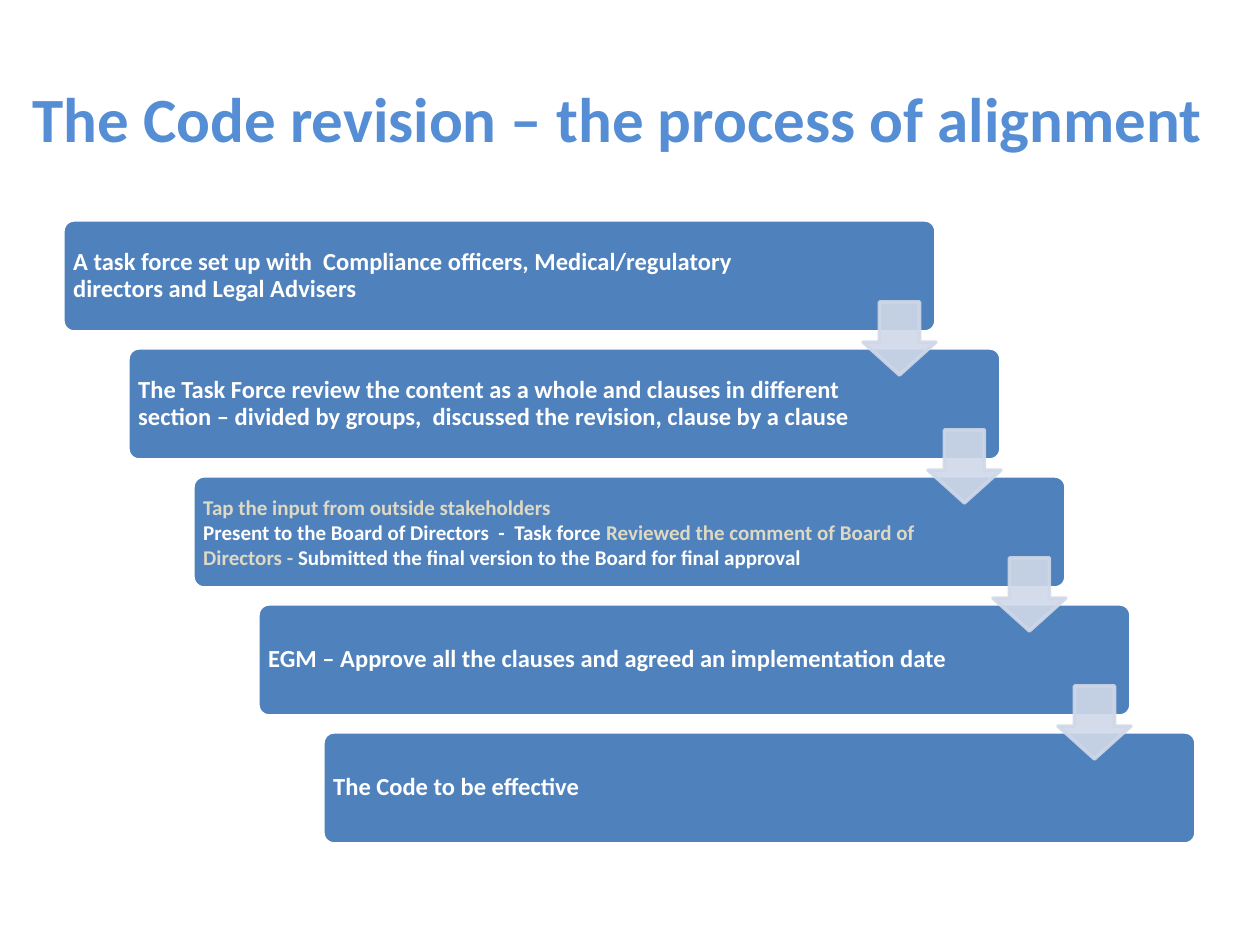
import dataclasses

import pptx
import pptx.dml.color
import pptx.enum.shapes
import pptx.enum.text
import pptx.oxml.ns
import pptx.util
from lxml import etree

EMU_PER_PX = 914400 // 126


@dataclasses.dataclass(frozen=True)
class Theme:
    font: str = "Calibri"
    title: str = "558ED5"
    box: str = "4F81BD"
    white: str = "FFFFFF"
    muted: str = "DDD9C3"
    arrow: str = "D0D8E8"
    arrow_opacity: int = 90
    title_size: int = 36
    step_size: int = 14
    detail_size: int = 12
    line_width: int = 2


THEME = Theme()

BOX_LEFT, BOX_TOP, BOX_WIDTH, BOX_HEIGHT = 63, 220, 873, 112
ARROW_LEFT, ARROW_TOP, ARROW_SIZE = 863, 302, 73
SHIFT_X, SHIFT_Y = 65, 128
TEXT_INSET, TEXT_INSET_RIGHT = 7, 134

# Each step is a text size and its paragraphs; each paragraph is a list of (text, colour).
STEPS = [
    (THEME.step_size, [[("A task force set up with  Compliance officers, Medical/regulatory "
                         "directors and Legal Advisers", THEME.white)]]),
    (THEME.step_size, [[("The Task Force review the content as a whole and clauses in different "
                         "section – divided by groups,  discussed the revision, "
                         "clause by a clause", THEME.white)]]),
    (THEME.detail_size, [
        [("Tap the input from outside stakeholders", THEME.muted)],
        [("Present to the Board of Directors  -  Task force ", THEME.white),
         ("Reviewed the comment of Board of Directors - ", THEME.muted),
         ("Submitted the final version to the Board for final approval", THEME.white)],
    ]),
    (THEME.step_size, [[("EGM – Approve all the clauses and agreed an implementation date",
                         THEME.white)]]),
    (THEME.step_size, [[("The Code to be effective", THEME.white)]]),
]


def px(length):
    return pptx.util.Emu(length * EMU_PER_PX)


def rgb(colour):
    return pptx.dml.color.RGBColor.from_string(colour)


def format_run(run, size, colour):
    run.font.name = THEME.font
    run.font.size = pptx.util.Pt(size)
    run.font.bold = True
    run.font.color.rgb = rgb(colour)


def set_title(slide, text):
    title = slide.shapes.title
    title.left, title.top, title.width, title.height = px(0), px(38), px(1235), px(158)
    title.text_frame.text = text
    title.text_frame.vertical_anchor = pptx.enum.text.MSO_ANCHOR.MIDDLE
    paragraph = title.text_frame.paragraphs[0]
    paragraph.alignment = pptx.enum.text.PP_ALIGN.CENTER
    format_run(paragraph.runs[0], THEME.title_size, THEME.title)


def add_block(slide, kind, left, top, width, height, fill, line):
    shape = slide.shapes.add_shape(kind, px(left), px(top), px(width), px(height))
    shape.shadow.inherit = False
    shape.fill.solid()
    shape.fill.fore_color.rgb = rgb(fill)
    shape.line.color.rgb = rgb(line)
    shape.line.width = pptx.util.Pt(THEME.line_width)
    return shape


def write_paragraphs(shape, size, paragraphs):
    frame = shape.text_frame
    frame.word_wrap = True
    frame.vertical_anchor = pptx.enum.text.MSO_ANCHOR.MIDDLE
    frame.margin_left = frame.margin_top = frame.margin_bottom = px(TEXT_INSET)
    frame.margin_right = px(TEXT_INSET_RIGHT)
    for number, pieces in enumerate(paragraphs):
        paragraph = frame.add_paragraph() if number else frame.paragraphs[0]
        paragraph.alignment = pptx.enum.text.PP_ALIGN.LEFT
        if size == THEME.step_size:
            paragraph.line_spacing = 0.9
        for text, colour in pieces:
            run = paragraph.add_run()
            run.text = text
            format_run(run, size, colour)


def add_step(slide, index, size, paragraphs):
    box = add_block(slide, pptx.enum.shapes.MSO_SHAPE.ROUNDED_RECTANGLE,
                    BOX_LEFT + index * SHIFT_X, BOX_TOP + index * SHIFT_Y,
                    BOX_WIDTH, BOX_HEIGHT, THEME.box, THEME.white)
    box.adjustments[0] = 0.1
    write_paragraphs(box, size, paragraphs)


def set_opacity(shape, percent):
    """Apply one opacity to the fill and the line."""
    for colour in shape.element.spPr.iter(pptx.oxml.ns.qn("a:srgbClr")):
        alpha = etree.SubElement(colour, pptx.oxml.ns.qn("a:alpha"))
        alpha.set("val", str(percent * 1000))


def add_arrow(slide, index):
    arrow = add_block(slide, pptx.enum.shapes.MSO_SHAPE.DOWN_ARROW,
                      ARROW_LEFT + index * SHIFT_X, ARROW_TOP + index * SHIFT_Y,
                      ARROW_SIZE, ARROW_SIZE, THEME.arrow, THEME.arrow)
    arrow.adjustments[0] = 0.55
    arrow.adjustments[1] = 0.45
    set_opacity(arrow, THEME.arrow_opacity)


def main():
    presentation = pptx.Presentation()
    presentation.slide_width, presentation.slide_height = px(1260), px(945)
    slide = presentation.slides.add_slide(presentation.slide_layouts[5])
    set_title(slide, "The Code revision – the process of alignment")
    for index, (size, paragraphs) in enumerate(STEPS):
        add_step(slide, index, size, paragraphs)
    for index in range(len(STEPS) - 1):
        add_arrow(slide, index)
    presentation.save("out.pptx")


if __name__ == "__main__":
    main()
